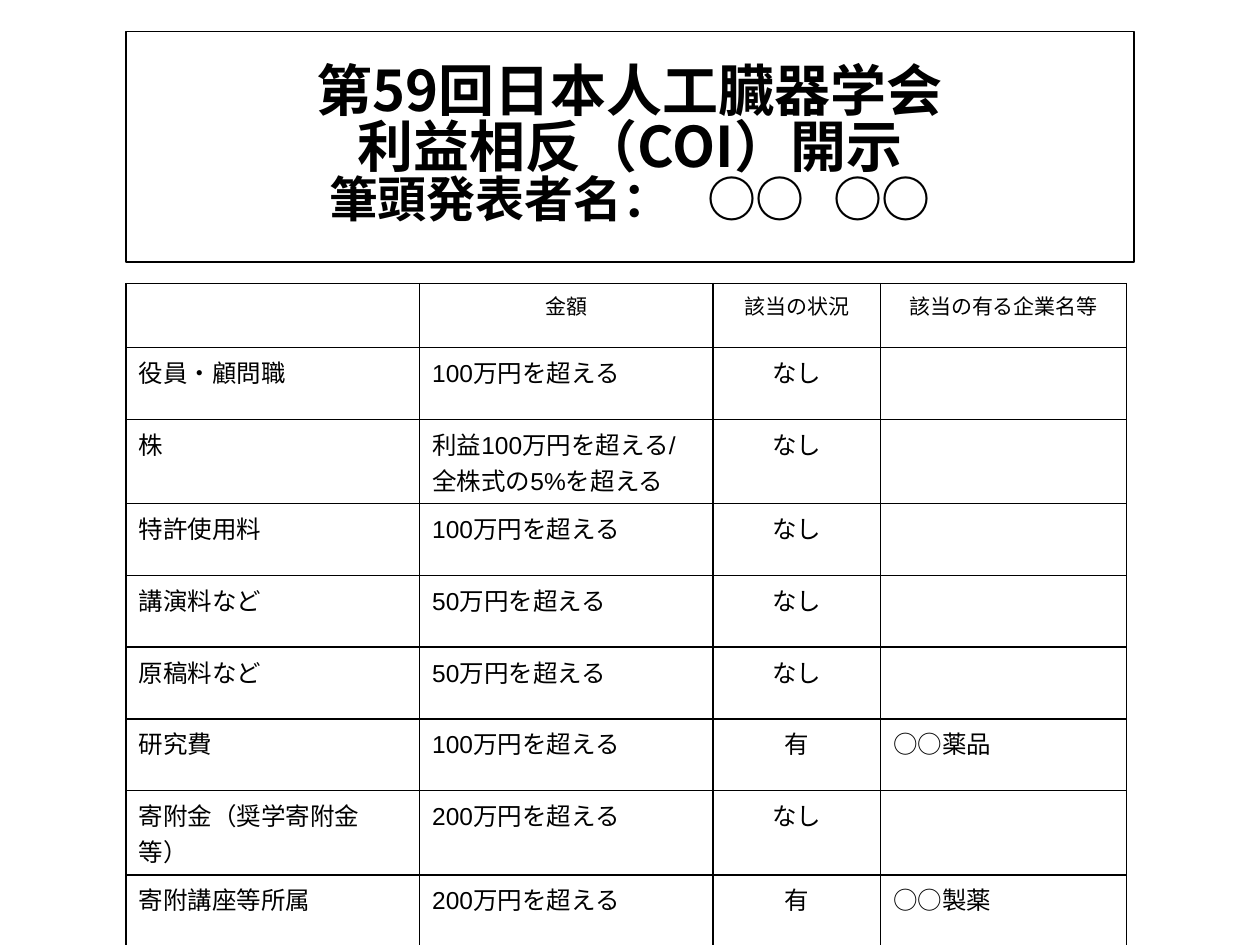
from lxml import etree
from pptx import Presentation
from pptx.dml.color import RGBColor
from pptx.enum.text import MSO_ANCHOR, PP_ALIGN
from pptx.oxml.ns import qn
from pptx.util import Inches, Pt

CENTER, LEFT, MIDDLE = PP_ALIGN.CENTER, PP_ALIGN.LEFT, MSO_ANCHOR.MIDDLE
COLORS = {"ink": "000000"}
INK = RGBColor.from_string(COLORS["ink"])
CJK, LATIN = "Noto Sans CJK JP", "Arial"

TITLE = [
    ("第59回日本人工臓器学会", 32),
    ("利益相反（COI）開示", 32),
    ("筆頭発表者名：\t○○\t○○", 28),
]
HEADER = ("", "金額", "該当の状況", "該当の有る企業名等")
ROWS = [
    ("役員・顧問職", "100万円を超える", "なし", ""),
    ("株", "利益100万円を超える/\n全株式の5%を超える", "なし", ""),
    ("特許使用料", "100万円を超える", "なし", ""),
    ("講演料など", "50万円を超える", "なし", ""),
    ("原稿料など", "50万円を超える", "なし", ""),
    ("研究費", "100万円を超える", "有", "○○薬品"),
    ("寄附金（奨学寄附金等）", "200万円を超える", "なし", ""),
    ("寄附講座等所属", "200万円を超える", "有", "○○製薬"),
]
COLS = (2.33, 2.33, 1.33, 1.95)
HEAD_H, ROW_H = 0.51, 0.57
STATUS_COL = 2


def format_run(r, latin, **fmt):
    for name, value in fmt.items():
        setattr(r.font, name, value)
    r.font.name = latin
    r.font.color.rgb = INK
    ea = etree.SubElement(r.font._element, qn("a:ea"))
    ea.set("typeface", CJK)


def add_borders(cell):
    tcPr = cell._tc.get_or_add_tcPr()
    for side in ("lnL", "lnR", "lnT", "lnB"):
        ln = etree.SubElement(tcPr, qn(f"a:{side}"), w=str(Pt(1)))
        fill = etree.SubElement(ln, qn("a:solidFill"))
        etree.SubElement(fill, qn("a:srgbClr"), val=COLORS["ink"])


def add_title(s):
    sp = s.shapes.title
    sp.left, sp.top, sp.width, sp.height = map(Inches, (1, 0.25, 8, 1.83))
    sp.line.color.rgb = INK
    sp.line.width = Pt(0.75)
    tf = sp.text_frame
    tf.word_wrap = True
    tf.vertical_anchor = MIDDLE
    tf.text = "\n".join(text for text, size in TITLE)
    for p, (text, size) in zip(tf.paragraphs, TITLE):
        p.alignment = CENTER
        p.line_spacing = 0.83
        p.space_before = Pt(0)
        format_run(p.runs[0], CJK, size=Pt(size), bold=True)


def add_coi_table(s):
    data = [HEADER] + ROWS
    heights = [HEAD_H] + [ROW_H] * len(ROWS)
    frame = s.shapes.add_table(len(data), len(COLS), Inches(1), Inches(2.25),
                               Inches(sum(COLS)), Inches(sum(heights)))
    table = frame.table
    table.first_row = table.horz_banding = False
    for col, width in zip(table.columns, COLS):
        col.width = Inches(width)
    for i, (texts, height) in enumerate(zip(data, heights)):
        table.rows[i].height = Inches(height)
        for j, text in enumerate(texts):
            cell = table.cell(i, j)
            add_borders(cell)
            cell.fill.background()
            cell.text = text
            for p in cell.text_frame.paragraphs:
                p.alignment = CENTER if i == 0 or j == STATUS_COL else LEFT
                for r in p.runs:
                    format_run(r, LATIN, size=Pt(14 if i else 12))


def main():
    prs = Presentation()
    prs.slide_width, prs.slide_height = Inches(10), Inches(7.5)
    s = prs.slides.add_slide(prs.slide_layouts[5])
    add_title(s)
    add_coi_table(s)
    prs.save("out.pptx")


if __name__ == "__main__":
    main()
